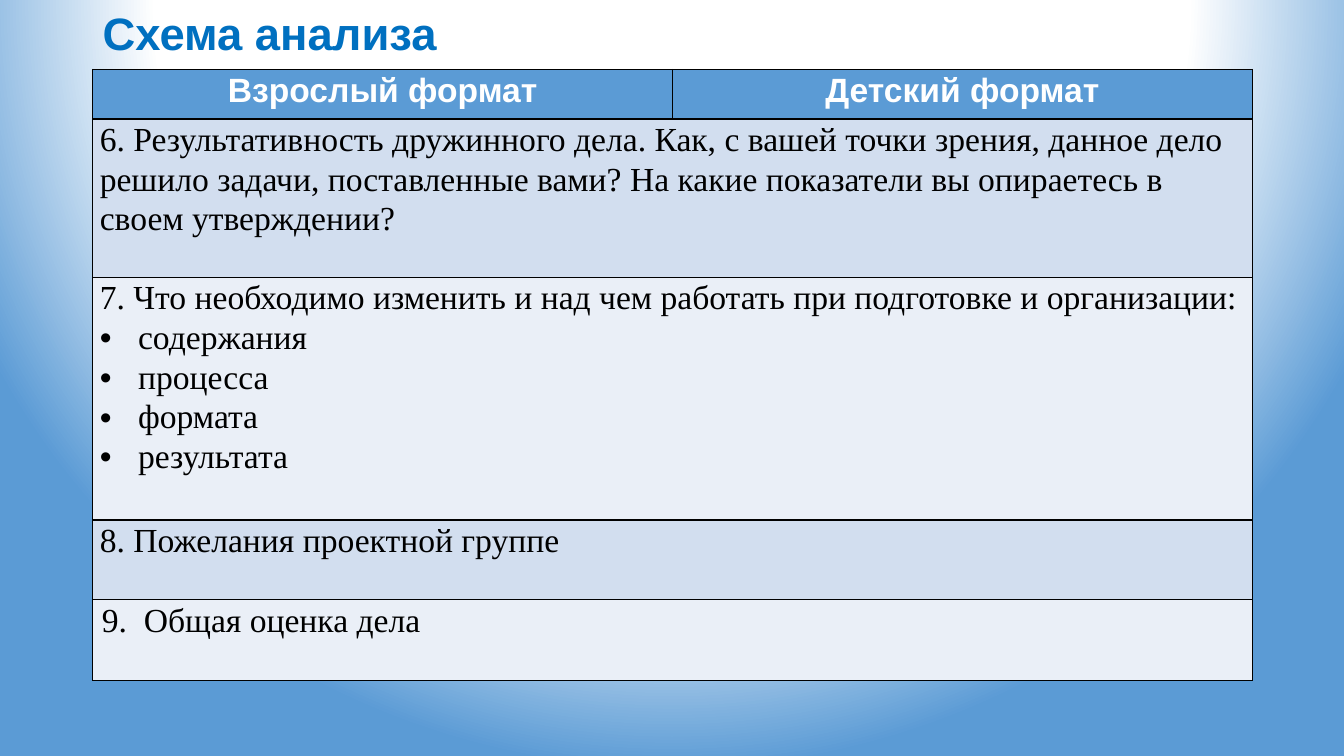
from lxml import etree
from pptx import Presentation
from pptx.dml.color import RGBColor
from pptx.enum.text import MSO_ANCHOR, PP_ALIGN
from pptx.oxml import parse_xml
from pptx.oxml.ns import nsdecls, qn
from pptx.util import Inches, Pt

CENTER, LEFT = PP_ALIGN.CENTER, PP_ALIGN.LEFT
MIDDLE = MSO_ANCHOR.MIDDLE

TITLE_BLUE = RGBColor(0x00, 0x70, 0xC0)
HEADER_BLUE = RGBColor(0x5B, 0x9B, 0xD5)
BAND_DARK = RGBColor(0xD2, 0xDE, 0xEF)
BAND_LIGHT = RGBColor(0xEA, 0xEF, 0xF7)
WHITE = RGBColor(0xFF, 0xFF, 0xFF)
BLACK = RGBColor(0x00, 0x00, 0x00)

BACKGROUND_STOPS = [(0, WHITE), (67, WHITE), (100, HEADER_BLUE)]
HEADERS = ["Взрослый формат", "Детский формат"]
HEADER_HEIGHT = 0.49
# Row height, then paragraphs as (text, left margin, first-line indent, bullet)
QUESTIONS = [
    (1.57, [("6. Результативность дружинного дела. Как, с вашей точки зрения, "
             "данное дело решило задачи, поставленные вами? На какие показатели "
             "вы опираетесь в своем утверждении?", 0, 0, None)]),
    (2.41, [("7. Что необходимо изменить и над чем работать при подготовке "
             "и организации:", 0, 0, None)]
     + [(item, 0.38, -0.38, "•")
        for item in ("содержания", "процесса", "формата", "результата")]),
    (0.79, [("8. Пожелания проектной группе", 0.5, -0.5, None)]),
    (0.8, [("9.\u00a0 Общая оценка дела", 0.12, -0.1, None)]),
]


def write(p, text, size=24, font="Times New Roman", color=BLACK, bold=False,
          align=LEFT, spacing=1.07, margin=0, indent=0, bullet=None):
    p.alignment, p.line_spacing = align, spacing
    pPr = p._p.get_or_add_pPr()
    pPr.set("marL", str(Inches(margin)))
    pPr.set("indent", str(Inches(indent)))
    if bullet:
        etree.SubElement(pPr, qn("a:buFont")).set("typeface", "Arial")
        etree.SubElement(pPr, qn("a:buChar")).set("char", bullet)
    r = p.add_run()
    r.text = text
    r.font.size, r.font.name, r.font.bold = Pt(size), font, bold
    r.font.color.rgb = color


def set_background(slide):
    """Radial gradient whose focus lies above the slide."""
    stops = "".join(f'<a:gs pos="{pos * 1000}"><a:srgbClr val="{color}"/></a:gs>'
                    for pos, color in BACKGROUND_STOPS)
    bg = parse_xml(
        f'<p:bg {nsdecls("p", "a")}><p:bgPr><a:gradFill rotWithShape="1">'
        f'<a:gsLst>{stops}</a:gsLst><a:path path="circle">'
        '<a:fillToRect l="50000" t="-80000" r="50000" b="180000"/></a:path>'
        '</a:gradFill><a:effectLst/></p:bgPr></p:bg>')
    slide.element.cSld.insert(0, bg)


def style_cell(cell, fill):
    cell.margin_left = cell.margin_right = Inches(0.07)
    cell.margin_top = cell.margin_bottom = 0
    tcPr = cell._tc.get_or_add_tcPr()
    for side in ("lnL", "lnR", "lnT", "lnB"):
        tcPr.append(parse_xml(
            f'<a:{side} {nsdecls("a")} w="{Pt(1)}"><a:solidFill>'
            f'<a:srgbClr val="{BLACK}"/></a:solidFill></a:{side}>'))
    cell.fill.solid()
    cell.fill.fore_color.rgb = fill


def add_title(slide, x, y, w, h):
    tf = slide.shapes.add_textbox(Inches(x), Inches(y), Inches(w), Inches(h)).text_frame
    tf.word_wrap, tf.vertical_anchor = True, MIDDLE
    write(tf.paragraphs[0], "Схема анализа", size=32.4, font="Arial",
          color=TITLE_BLUE, bold=True, spacing=0.9)


def add_analysis_table(slide, x, y, w):
    heights = [HEADER_HEIGHT] + [height for height, _ in QUESTIONS]
    table = slide.shapes.add_table(len(heights), len(HEADERS), Inches(x), Inches(y),
                                   Inches(w), Inches(sum(heights))).table
    for row, height in zip(table.rows, heights):
        row.height = Inches(height)
    for col, header in enumerate(HEADERS):
        cell = table.cell(0, col)
        style_cell(cell, HEADER_BLUE)
        write(cell.text_frame.paragraphs[0], header, font="Arial", color=WHITE,
              bold=True, align=CENTER)
    for row, (_, paragraphs) in enumerate(QUESTIONS, start=1):
        for col in range(len(HEADERS)):
            style_cell(table.cell(row, col), BAND_DARK if row % 2 else BAND_LIGHT)
        cell = table.cell(row, 0)
        cell.merge(table.cell(row, len(HEADERS) - 1))
        tf = cell.text_frame
        for i, (text, margin, indent, bullet) in enumerate(paragraphs):
            p = tf.add_paragraph() if i else tf.paragraphs[0]
            write(p, text, margin=margin, indent=indent, bullet=bullet)


def main():
    prs = Presentation()
    prs.slide_width, prs.slide_height = Inches(13.33), Inches(7.5)
    slide = prs.slides.add_slide(prs.slide_layouts[6])
    set_background(slide)
    add_title(slide, 0.92, 0.06, 11.5, 0.59)
    add_analysis_table(slide, 0.92, 0.69, 11.5)
    prs.save("out.pptx")


if __name__ == "__main__":
    main()
